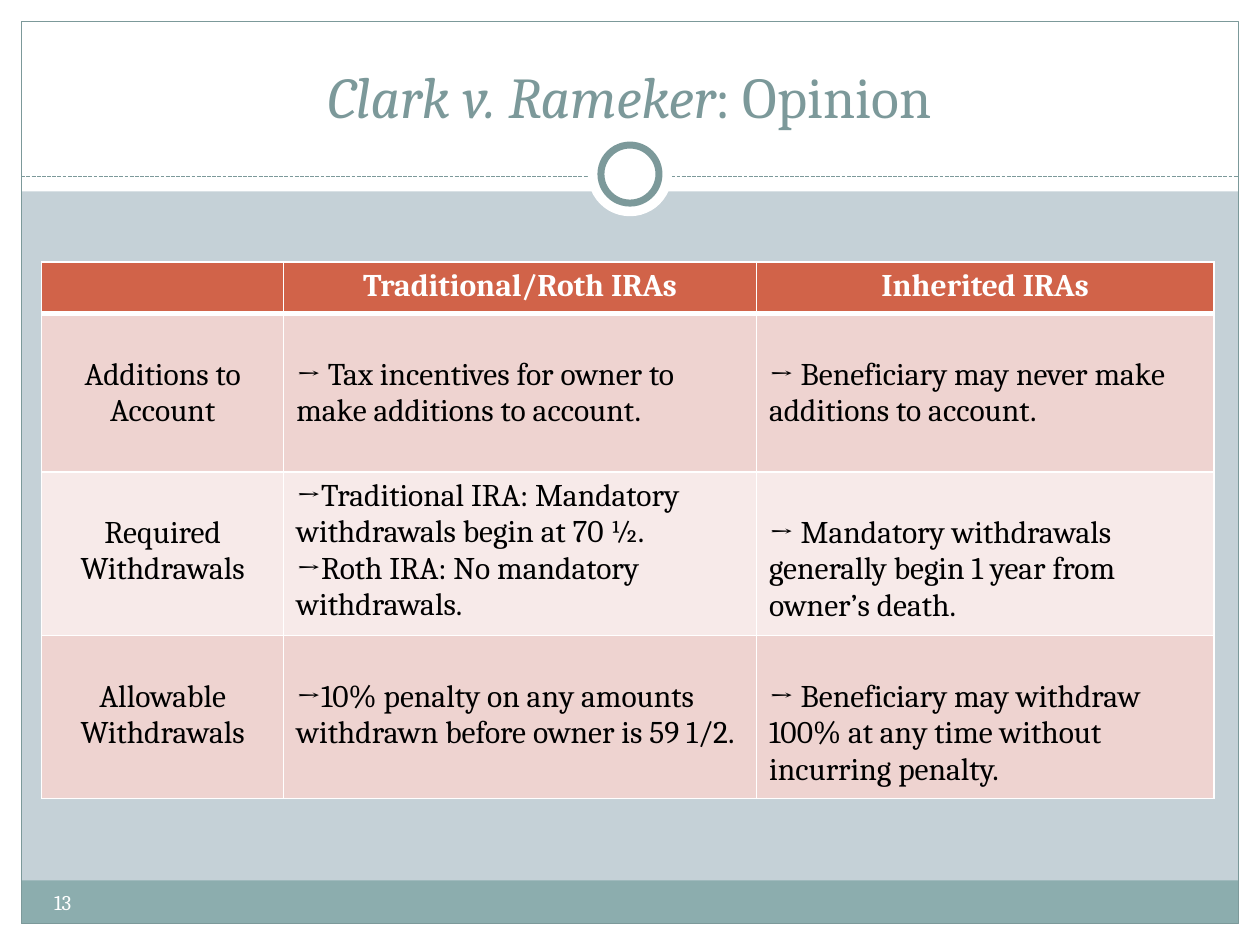
"""Build a slide comparing traditional and Roth IRAs with inherited IRAs."""
from dataclasses import dataclass

from lxml import etree
from pptx import Presentation
from pptx.dml.color import RGBColor
from pptx.enum.dml import MSO_LINE
from pptx.enum.shapes import MSO_CONNECTOR, MSO_SHAPE
from pptx.enum.text import MSO_ANCHOR, PP_ALIGN
from pptx.oxml.ns import qn
from pptx.util import Cm, Pt

RECTANGLE, OVAL = MSO_SHAPE.RECTANGLE, MSO_SHAPE.OVAL
STRAIGHT = MSO_CONNECTOR.STRAIGHT
DASH = MSO_LINE.SQUARE_DOT
TOP, BOTTOM = MSO_ANCHOR.TOP, MSO_ANCHOR.BOTTOM
LEFT, CENTER = PP_ALIGN.LEFT, PP_ALIGN.CENTER


@dataclass(frozen=True)
class Theme:
    font: str = "Cambria"
    background: str = "C5D1D7"
    white: str = "FFFFFF"
    black: str = "000000"
    accent: str = "7C999A"
    footer: str = "8CADAE"
    header: str = "D16349"
    bands: tuple = ("EED3D0", "F7EAE9")
    title_size: float = 33
    table_size: float = 18
    number_size: float = 12


THEME = Theme()
TITLE = ("Clark v. Rameker", ": Opinion")
PAGE_NUMBER = "13"
HEADER = ("", "Traditional/Roth IRAs", "Inherited IRAs")
ROWS = [
    (
        ["Additions to Account"],
        ["→ Tax incentives for owner to make additions to account."],
        ["→ Beneficiary may never make additions to account."],
    ),
    (
        ["Required", "Withdrawals"],
        [
            "→Traditional IRA: Mandatory withdrawals begin at 70 ½.",
            "→Roth IRA: No mandatory withdrawals.",
        ],
        ["→ Mandatory withdrawals generally begin 1 year from owner’s death."],
    ),
    (
        ["Allowable Withdrawals"],
        ["→10% penalty on any amounts withdrawn before owner is 59 1/2."],
        ["→ Beneficiary may withdraw 100% at any time without incurring penalty."],
    ),
]

WIDTH, HEIGHT, MARGIN = 25.4, 19.05, 0.43
INNER_WIDTH, INNER_HEIGHT = WIDTH - 2 * MARGIN, HEIGHT - 2 * MARGIN
BANNER_HEIGHT, RULE_Y, FOOTER_HEIGHT = 3.86, 3.56, 0.87
RING_Y, DISC_SIZE, RING_SIZE = 3.51, 1.7, 1.17
TABLE_LEFT, TABLE_TOP = 0.84, 5.28
COLUMN_WIDTHS = (4.88, 9.53, 9.22)
HEADER_HEIGHT, ROW_HEIGHT = 1.04, 3.19
CELL_INSET, LOWERED_INSET = 0.13, 0.87
THIN, THICK = 1, 3


def color(value):
    return RGBColor.from_string(value)


def add_panel(page, kind, bounds, fill=None, line=None, weight=0.75):
    panel = page.shapes.add_shape(kind, *map(Cm, bounds))
    panel.shadow.inherit = False
    if fill:
        panel.fill.solid()
        panel.fill.fore_color.rgb = color(fill)
    else:
        panel.fill.background()
    if line:
        panel.line.color.rgb = color(line)
        panel.line.width = Pt(weight)
    else:
        panel.line.fill.background()


def add_circle(page, size, **style):
    bounds = ((WIDTH - size) / 2, RING_Y - size / 2, size, size)
    add_panel(page, OVAL, bounds, THEME.white, **style)


def add_rule(page):
    rule = page.shapes.add_connector(
        STRAIGHT, Cm(MARGIN), Cm(RULE_Y), Cm(WIDTH - MARGIN), Cm(RULE_Y)
    )
    rule.line.color.rgb = color(THEME.accent)
    rule.line.width = Pt(0.75)
    rule.line.dash_style = DASH
    properties = rule._element.find(qn("p:spPr"))
    etree.SubElement(properties, qn("a:effectLst"))


def style_span(span, size, ink, bold=False, italic=False):
    font = span.font
    font.name, font.size = THEME.font, Pt(size)
    font.bold, font.italic = bold, italic
    font.color.rgb = color(ink)


def add_text(page, bounds, pieces, size, ink, align=LEFT, anchor=TOP):
    frame = page.shapes.add_textbox(*map(Cm, bounds)).text_frame
    frame.word_wrap = True
    frame.vertical_anchor = anchor
    para = frame.paragraphs[0]
    para.alignment = align
    for text, italic in pieces:
        span = para.add_run()
        span.text = text
        style_span(span, size, ink, italic=italic)


def set_borders(cell, top, bottom):
    properties = cell._tc.get_or_add_tcPr()
    for side, weight in (("L", THIN), ("R", THIN), ("T", top), ("B", bottom)):
        border = etree.SubElement(properties, qn(f"a:ln{side}"), w=str(Pt(weight)))
        fill = etree.SubElement(border, qn("a:solidFill"))
        etree.SubElement(fill, qn("a:srgbClr"), val=THEME.white)


def fill_cell(cell, lines, fill, ink, align, bold=False, inset=CELL_INSET):
    cell.fill.solid()
    cell.fill.fore_color.rgb = color(fill)
    cell.margin_top = Cm(inset)
    cell.text_frame.text = "\n".join(lines)
    for para in cell.text_frame.paragraphs:
        para.alignment = align
        para.font.size = Pt(THEME.table_size)
        for span in para.runs:
            style_span(span, THEME.table_size, ink, bold)


def add_comparison(page):
    heights = [HEADER_HEIGHT] + [ROW_HEIGHT] * len(ROWS)
    bounds = (TABLE_LEFT, TABLE_TOP, sum(COLUMN_WIDTHS), sum(heights))
    table = page.shapes.add_table(
        len(heights), len(COLUMN_WIDTHS), *map(Cm, bounds)
    ).table
    for column, width in zip(table.columns, COLUMN_WIDTHS):
        column.width = Cm(width)
    for row, height in zip(table.rows, heights):
        row.height = Cm(height)
    for index, text in enumerate(HEADER):
        cell = table.cell(0, index)
        set_borders(cell, THIN, THICK)
        fill_cell(cell, [text], THEME.header, THEME.white, CENTER, bold=True)
    for number, entries in enumerate(ROWS, 1):
        band = THEME.bands[(number - 1) % len(THEME.bands)]
        for index, lines in enumerate(entries):
            cell = table.cell(number, index)
            set_borders(cell, THICK if number == 1 else THIN, THIN)
            full = index > 0 and len(lines) > 1
            fill_cell(
                cell, lines, band, THEME.black, LEFT if index else CENTER,
                inset=CELL_INSET if full else LOWERED_INSET,
            )


def main():
    deck = Presentation()
    deck.slide_width, deck.slide_height = Cm(WIDTH), Cm(HEIGHT)
    page = deck.slides.add_slide(deck.slide_layouts[6])
    page.background.fill.solid()
    page.background.fill.fore_color.rgb = color(THEME.background)
    for bounds in (
        (0, HEIGHT - MARGIN, WIDTH, MARGIN),
        (0, 0, WIDTH, BANNER_HEIGHT),
        (0, 0, MARGIN, HEIGHT),
        (WIDTH - MARGIN, 0, MARGIN, HEIGHT),
    ):
        add_panel(page, RECTANGLE, bounds, THEME.white)
    footer_top = HEIGHT - MARGIN - FOOTER_HEIGHT
    footer = (MARGIN, footer_top, INNER_WIDTH, FOOTER_HEIGHT)
    add_panel(page, RECTANGLE, footer, THEME.footer)
    frame = (MARGIN, MARGIN, INNER_WIDTH, INNER_HEIGHT)
    add_panel(page, RECTANGLE, frame, line=THEME.accent)
    add_rule(page)
    add_circle(page, DISC_SIZE)
    add_circle(page, RING_SIZE, line=THEME.accent, weight=4)
    add_text(page, (0.84, 0.64, 23.7, 2.11), zip(TITLE, (True, False)),
             THEME.title_size, THEME.accent, CENTER, BOTTOM)
    add_comparison(page)
    add_text(page, (0.84, 17.81, 9.96, 1.02), [(PAGE_NUMBER, False)],
             THEME.number_size, THEME.white)
    deck.save("out.pptx")


if __name__ == "__main__":
    main()
